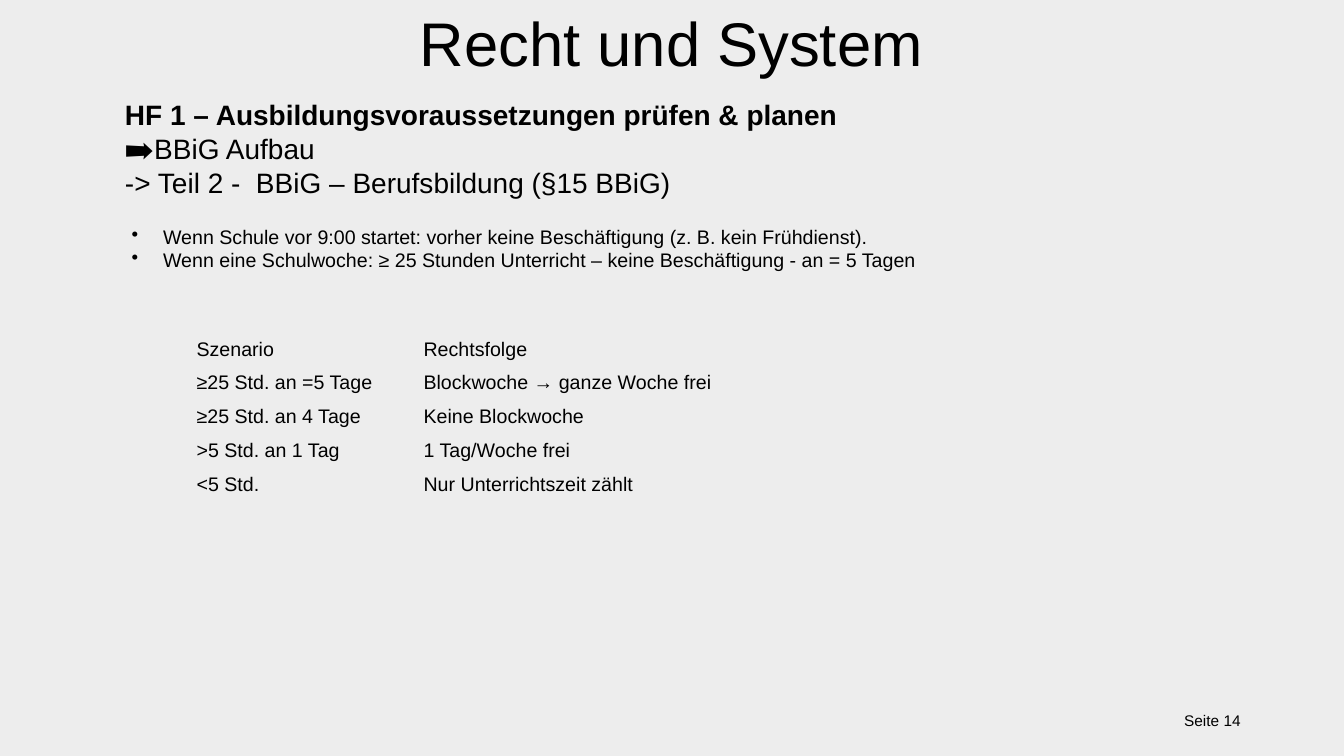
import pptx
import pptx.dml.color
import pptx.enum.text
import pptx.oxml.ns
import pptx.util
from lxml import etree

Cm = pptx.util.Cm
Pt = pptx.util.Pt
Align = pptx.enum.text.PP_ALIGN
Anchor = pptx.enum.text.MSO_ANCHOR

BLACK = pptx.dml.color.RGBColor(0x00, 0x00, 0x00)
LIGHT_GREY = pptx.dml.color.RGBColor(0xED, 0xED, 0xED)

HEADINGS = [
    "HF 1 – Ausbildungsvoraussetzungen prüfen & planen",
    "➡️BBiG Aufbau",
    "-> Teil 2 -  BBiG – Berufsbildung (§15 BBiG)",
]
SCHOOL_RULES = [
    "Wenn Schule vor 9:00 startet: vorher keine Beschäftigung (z. B. kein Frühdienst).",
    "Wenn eine Schulwoche: ≥ 25 Stunden Unterricht – keine Beschäftigung - an = 5 Tagen",
]
SCENARIOS = [
    ("Szenario", "Rechtsfolge"),
    ("≥25 Std. an =5 Tage", "Blockwoche → ganze Woche frei"),
    ("≥25 Std. an 4 Tage", "Keine Blockwoche"),
    (">5 Std. an 1 Tag", "1 Tag/Woche frei"),
    ("<5 Std.", "Nur Unterrichtszeit zählt"),
]


class SlideBuilder:
    """Holds the text style and the slide being filled."""

    font_name = "Arial"
    text_color = BLACK
    bullet_indent = Cm(0.79)

    def __init__(self, slide):
        self.slide = slide
        fill = slide.background.fill
        fill.solid()
        fill.fore_color.rgb = LIGHT_GREY

    def format_paragraph(self, paragraph, size, align=Align.LEFT):
        paragraph.alignment = align
        for run in paragraph.runs:
            run.font.name = self.font_name
            run.font.size = Pt(size)
            run.font.color.rgb = self.text_color

    def add_text(self, lines, left, top, width, height, size,
                 align=Align.LEFT, anchor=Anchor.TOP):
        box = self.slide.shapes.add_textbox(Cm(left), Cm(top), Cm(width), Cm(height))
        text_frame = box.text_frame
        text_frame.word_wrap = True
        text_frame.vertical_anchor = anchor
        text_frame.text = "\n".join(lines)
        for paragraph in text_frame.paragraphs:
            self.format_paragraph(paragraph, size, align)
        return text_frame

    def add_bullets(self, lines, left, top, width, height, size):
        text_frame = self.add_text(lines, left, top, width, height, size)
        for paragraph in text_frame.paragraphs:
            properties = paragraph._p.get_or_add_pPr()
            properties.set("marL", str(self.bullet_indent))
            properties.set("indent", str(-self.bullet_indent))
            bullet = etree.SubElement(properties, pptx.oxml.ns.qn("a:buChar"))
            bullet.set("char", "•")

    def add_table(self, rows, left, top, column_widths, row_height, size):
        """Add a table without fills, borders or header style."""
        frame = self.slide.shapes.add_table(
            len(rows), len(column_widths), Cm(left), Cm(top),
            Cm(sum(column_widths)), Cm(row_height * len(rows)))
        table = frame.table
        table.first_row = False
        table.horz_banding = False
        for column, width in zip(table.columns, column_widths):
            column.width = Cm(width)
        for table_row, texts in zip(table.rows, rows):
            table_row.height = Cm(row_height)
            for cell, text in zip(table_row.cells, texts):
                cell.text_frame.text = text
                cell.vertical_anchor = Anchor.MIDDLE
                self.format_paragraph(cell.text_frame.paragraphs[0], size)
                self.clear_cell(cell)

    def clear_cell(self, cell):
        properties = cell._tc.get_or_add_tcPr()
        for side in ("a:lnL", "a:lnR", "a:lnT", "a:lnB"):
            line = etree.SubElement(properties, pptx.oxml.ns.qn(side))
            etree.SubElement(line, pptx.oxml.ns.qn("a:noFill"))
        cell.fill.background()


def main():
    presentation = pptx.Presentation()
    presentation.slide_width = Cm(33.87)
    presentation.slide_height = Cm(19.05)
    blank_layout = presentation.slide_layouts[6]
    builder = SlideBuilder(presentation.slides.add_slide(blank_layout))

    builder.add_text(["Recht und System"], 8.05, 0, 17.75, 2.13, 44, Align.CENTER)
    headings = builder.add_text(HEADINGS, 2.9, 2.34, 28.07, 2.82, 20)
    headings.paragraphs[0].runs[0].font.bold = True
    builder.add_text(["Seite 14"], 28.45, 17.65, 3.07, 1.02, 11,
                     Align.RIGHT, Anchor.MIDDLE)
    builder.add_bullets(SCHOOL_RULES, 3.07, 5.54, 28.45, 1.45, 14)
    builder.add_table(SCENARIOS, 4.7, 8.38, [5.72, 10.87], 0.85, 14)

    presentation.save("out.pptx")


if __name__ == "__main__":
    main()
